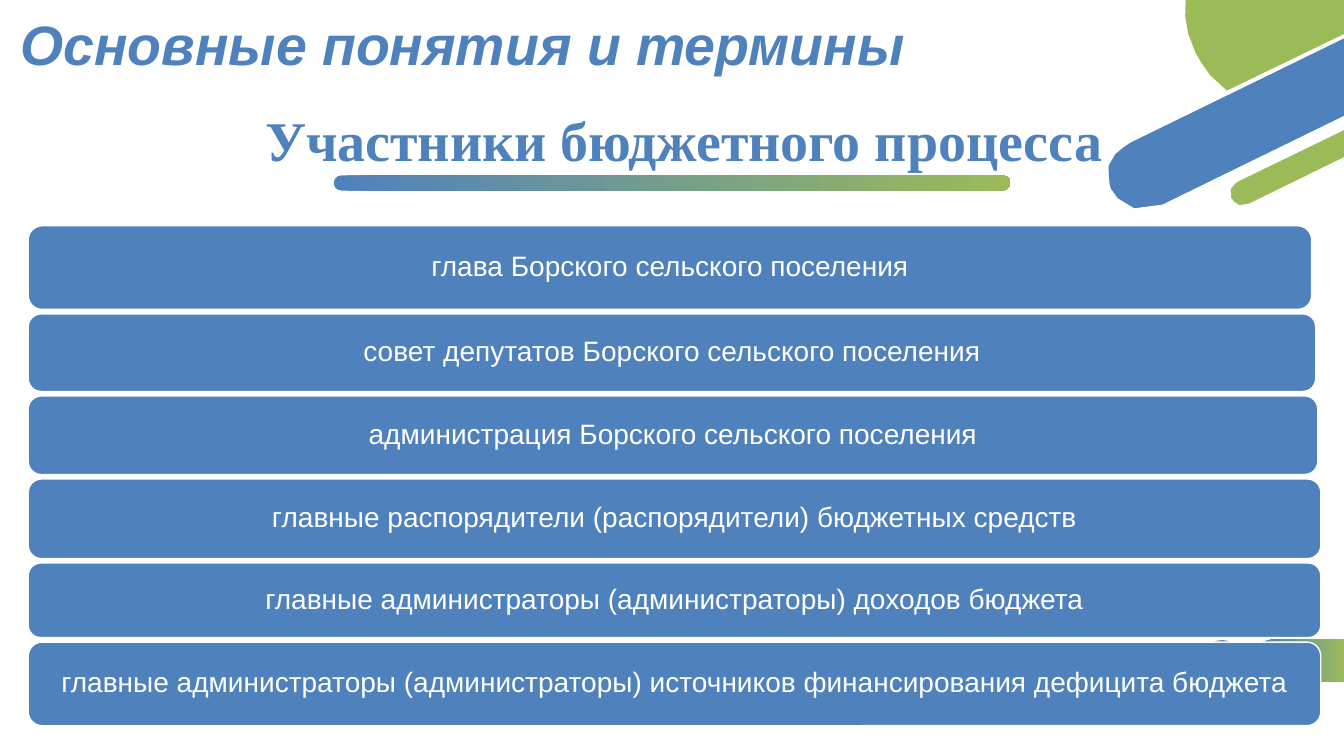
from pptx import Presentation
from pptx.dml.color import RGBColor
from pptx.enum.shapes import MSO_SHAPE
from pptx.enum.text import MSO_ANCHOR, PP_ALIGN
from pptx.util import Inches, Pt

# The grid has one-inch cells: 13.33 columns by 7.5 rows
COLS, ROWS = 13.33, 7.5
BLUE, GREEN, WHITE = "4F81BD", "9BBB59", "FFFFFF"
STEPS = 3

# Corner art, in cells from the left top of its box.
# A pair is a straight line to a point, six numbers are a curve.
CORNER = [
    (WHITE, [(3.33, .81), (3.06, .94), (2.74, 1.1, 2.44, 1.08, 2.19, .89),
             (1.99, .74, 1.89, .55, 1.89, .55), (1.88, .52),
             (1.79, .34, 1.75, .16, 1.78, 0), (1.74, 0),
             (1.71, .17, 1.75, .35, 1.84, .54), (1.86, .57),
             (1.86, .58, 1.96, .77, 2.16, .92),
             (2.28, 1.01, 2.44, 1.09, 2.65, 1.09),
             (2.77, 1.09, 2.91, 1.06, 3.08, .98), (3.33, .86)]),
    (BLUE, [(1.21, 1.39), (1.21, 1.39, .85, 1.57, 1.01, 1.89), (1.01, 1.9),
            (1.01, 1.9, 1.17, 2.22, 1.54, 2.04), (3.33, 1.17), (3.33, .36)]),
    (GREEN, [(1.88, .56), (1.88, .56, 1.97, .76, 2.17, .9), (3.33, .34),
             (3.33, 0), (1.76, 0), (1.74, .15, 1.76, .33, 1.86, .53)]),
    (GREEN, [(3.33, 1.26), (2.27, 1.78), (2.27, 1.78, 2.13, 1.85, 2.2, 1.97),
             (2.2, 1.98), (2.2, 1.98, 2.26, 2.11, 2.4, 2.04), (3.33, 1.58)]),
    (WHITE, [(2.39, 2.02), (2.27, 2.08, 2.22, 1.98, 2.22, 1.97), (2.21, 1.97),
             (2.16, 1.86, 2.28, 1.8, 2.28, 1.8), (3.33, 1.29), (3.33, 1.24),
             (2.26, 1.76), (2.26, 1.76, 2.19, 1.8, 2.17, 1.87),
             (2.15, 1.91, 2.16, 1.95, 2.18, 1.99),
             (2.2, 2.03, 2.25, 2.08, 2.32, 2.08),
             (2.35, 2.08, 2.38, 2.08, 2.41, 2.06), (3.33, 1.61), (3.33, 1.56)]),
    (WHITE, [(1.53, 2.03), (1.19, 2.19, 1.03, 1.9, 1.03, 1.89), (1.02, 1.88),
             (.96, 1.75, .97, 1.64, 1.06, 1.53),
             (1.13, 1.46, 1.22, 1.41, 1.22, 1.41), (3.33, .38), (3.33, .34),
             (1.2, 1.37), (1.19, 1.38, 1.02, 1.46, .96, 1.63),
             (.93, 1.71, .94, 1.8, .99, 1.9),
             (.99, 1.91, 1.1, 2.12, 1.33, 2.12),
             (1.39, 2.12, 1.46, 2.1, 1.54, 2.06), (3.33, 1.19), (3.33, 1.15)]),
]

# Width, height and wording of each row
PARTIES = [
    (12.73, .83, "глава Борского сельского поселения"),
    (12.77, .77, "совет депутатов Борского сельского поселения"),
    (12.79, .78, "администрация Борского сельского поселения"),
    (12.82, .79, "главные распорядители (распорядители) бюджетных средств"),
    (12.82, .74, "главные администраторы (администраторы) доходов бюджета"),
    (12.82, .83, "главные администраторы (администраторы) источников "
                 "финансирования дефицита бюджета"),
]


def tint(code):
    return RGBColor.from_string(code)


def paint(shape, color, edge=None):
    shape.shadow.inherit = False
    shape.fill.solid()
    shape.fill.fore_color.rgb = tint(color)
    if edge:
        shape.line.color.rgb = tint(edge)
        shape.line.width = Pt(1)
    else:
        shape.line.fill.background()


def blend(shape, start):
    shape.fill.gradient()
    shape.fill.gradient_angle = 0
    for stop, color, place in zip(shape.fill.gradient_stops, (BLUE, GREEN), (start, 1)):
        stop.color.rgb = tint(color)
        stop.position = place


def trace(steps):
    """Turn lines and cubic curves into a list of points."""
    dots = []
    for step in steps:
        if len(step) == 2:
            dots.append(step)
            continue
        ends = [dots[-1], step[:2], step[2:4], step[4:]]
        for n in range(1, STEPS + 1):
            t = n / STEPS
            parts = ((1 - t) ** 3, 3 * t * (1 - t) ** 2, 3 * t * t * (1 - t), t ** 3)
            dots.append(tuple(sum(w * e[i] for w, e in zip(parts, ends)) for i in (0, 1)))
    return dots


def outline(slide, left, top, steps, color):
    dots = [(Inches(left + x), Inches(top + y)) for x, y in trace(steps)]
    pen = slide.shapes.build_freeform(*dots[0])
    pen.add_line_segments(dots[1:], close=True)
    shape = pen.convert_to_shape()
    paint(shape, color)
    return shape


def preset(slide, kind, box, color, edge=None):
    shape = slide.shapes.add_shape(kind, *map(Inches, box))
    paint(shape, color, edge)
    return shape


def write(shape, text, look, anchor, align, space, pads):
    frame = shape.text_frame
    frame.word_wrap = True
    frame.vertical_anchor = anchor
    for side, pad in zip(("left", "top", "right", "bottom"), pads):
        setattr(frame, "margin_" + side, Inches(pad))
    para = frame.paragraphs[0]
    para.alignment, para.line_spacing = align, space
    run = para.add_run()
    run.text = text
    for key, value in look.items():
        if key == "color":
            run.font.color.rgb = tint(value)
        else:
            setattr(run.font, key, value)


def label(slide, box, *args):
    write(slide.shapes.add_textbox(*map(Inches, box)), *args)


def foot(slide, left, top, width, height):
    """Dot and a gradient bar that runs off to the right."""
    preset(slide, MSO_SHAPE.OVAL, (left, top + .01, .42, .42), BLUE)
    r, k = height / 2, height * .22
    steps = [(r, height), (k, height, 0, height - k, 0, r), (0, k, k, 0, r, 0),
             (width - .5, 0), (width - .5, height)]
    blend(outline(slide, left + .5, top, steps, BLUE), .12)


def rule(slide, *box):
    shape = preset(slide, MSO_SHAPE.ROUNDED_RECTANGLE, box, BLUE)
    shape.adjustments[0] = .5
    blend(shape, 0)


def corner(slide, left, top):
    for color, steps in CORNER:
        outline(slide, left, top, steps, color)


def stack(slide, left, top, height):
    gap = (height - sum(p[1] for p in PARTIES)) / (len(PARTIES) - 1)
    look = dict(name="Arial", size=Pt(20), color=WHITE)
    for wide, tall, text in PARTIES:
        row = preset(slide, MSO_SHAPE.ROUNDED_RECTANGLE, (left, top, wide, tall),
                     BLUE, WHITE)
        write(row, text, look, MSO_ANCHOR.MIDDLE, PP_ALIGN.CENTER, .9,
              (.08, .04, .08, .04))
        top += tall + gap


def main():
    deck = Presentation()
    deck.slide_width, deck.slide_height = Inches(COLS), Inches(ROWS)
    slide = deck.slides.add_slide(deck.slide_layouts[6])

    # Foot mark, heading rule and corner art
    foot(slide, 11.91, 6.34, COLS - 11.91, .43)
    rule(slide, 3.31, 1.74, 6.71, .15)
    corner(slide, 10, 0)

    # Headings
    pads = (.1, .05, .1, .05)
    label(slide, (2.53, 1.07, 8.91, .52), "Участники бюджетного процесса",
          dict(name="Times New Roman", size=Pt(40), bold=True, color=BLUE),
          MSO_ANCHOR.TOP, PP_ALIGN.LEFT, .9, pads)
    label(slide, (0, 0, 9.18, .79), "Основные понятия и термины",
          dict(name="Arial", size=Pt(39.6), bold=True, italic=True, color=BLUE),
          MSO_ANCHOR.BOTTOM, PP_ALIGN.CENTER, .7, pads)

    # Rows of parties
    stack(slide, .28, 2.24, 4.96)
    deck.save("out.pptx")


if __name__ == "__main__":
    main()
